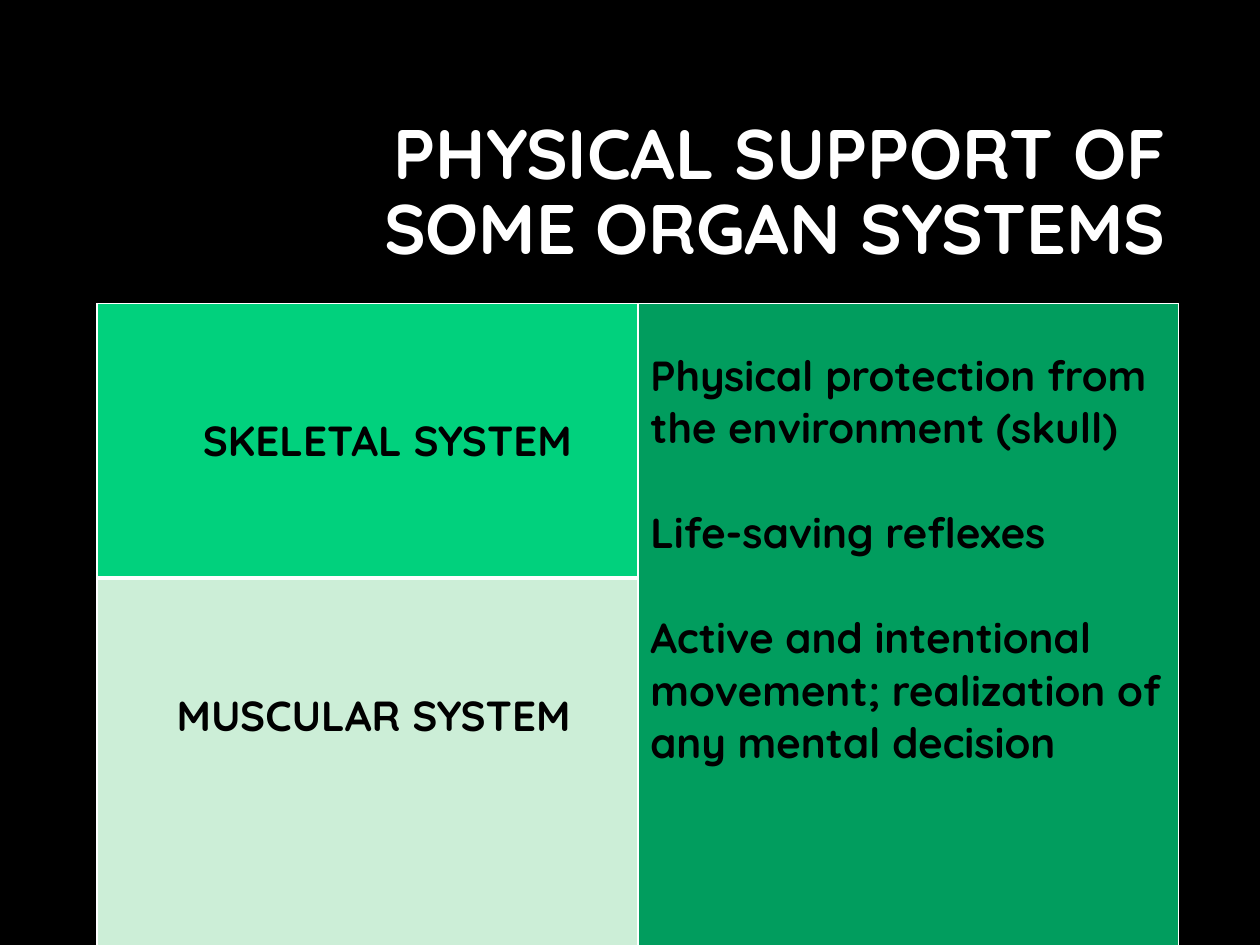
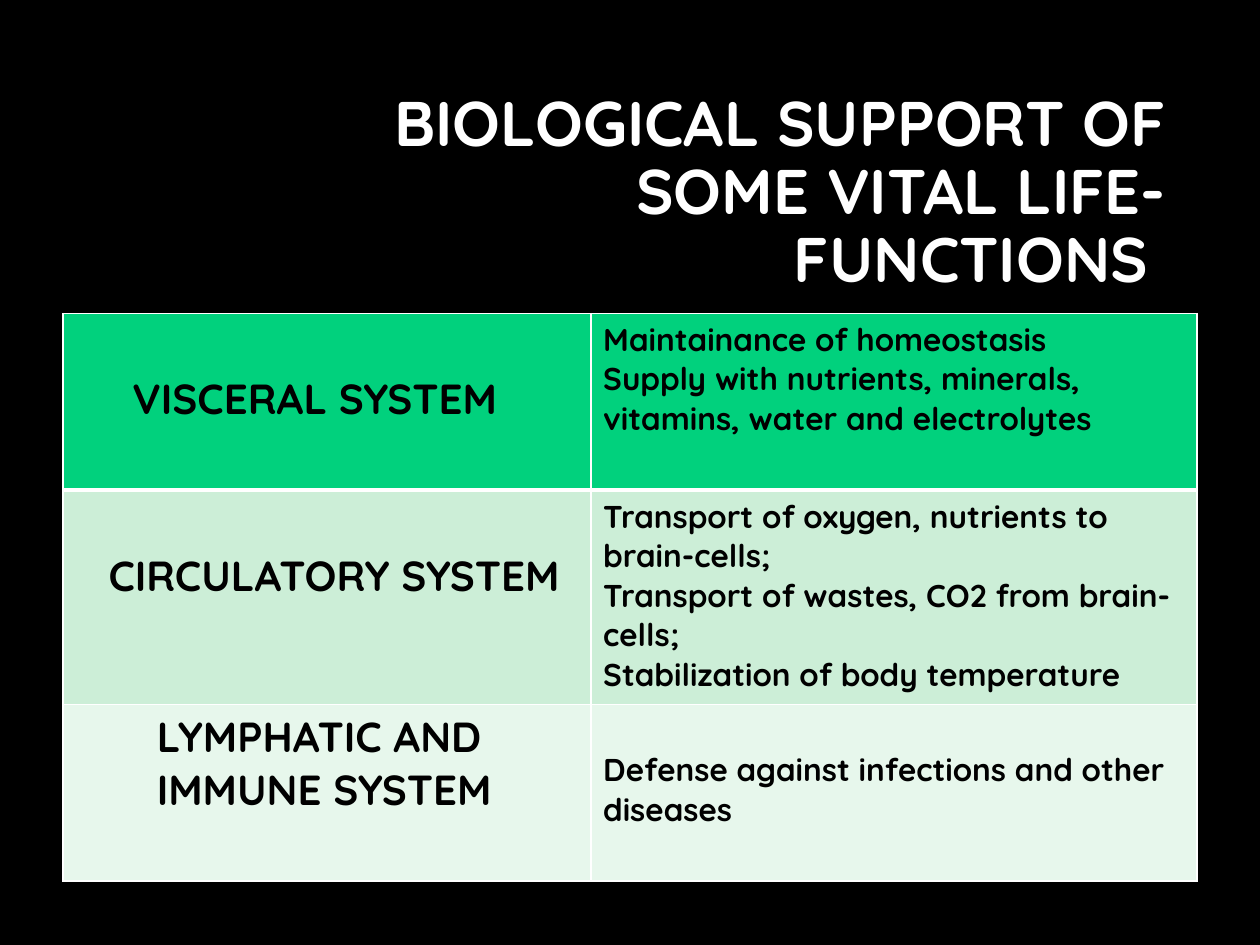
from lxml import etree
from pptx import Presentation
from pptx import util as u
from pptx.dml import color
from pptx.enum import text
from pptx.oxml import ns

FONT = "Quicksand"
COLORS = {
    "background": "000000",
    "title": "FFFFFF",
    "text": "000000",
    "border": "FFFFFF",
    "header": "01D17D",
    "support": "019D5E",
    "band": "CCEED7",
    "pale": "E7F7EC",
}


def rgb(name):
    return color.RGBColor.from_string(COLORS[name])


def add_run(p, wording, size, color_name):
    r = p.add_run()
    r.text = wording
    r.font.name = FONT
    r.font.size = u.Pt(size)
    r.font.bold = True
    r.font.color.rgb = rgb(color_name)


def add_slide(prs, title, size):
    s = prs.slides.add_slide(prs.slide_layouts[6])
    s.background.fill.solid()
    s.background.fill.fore_color.rgb = rgb("background")
    sp = s.shapes.add_textbox(u.Cm(6.05), u.Cm(2.13), u.Cm(17.7), u.Cm(3.58))
    tf = sp.text_frame
    tf.word_wrap = True
    tf.vertical_anchor = text.MSO_ANCHOR.MIDDLE
    p = tf.paragraphs[0]
    p.alignment = text.PP_ALIGN.RIGHT
    p.line_spacing = 0.9
    add_run(p, title, size, "title")
    return s


def add_table(s, left, top, widths, heights):
    frame = s.shapes.add_table(len(heights), len(widths), u.Cm(left), u.Cm(top),
                               u.Cm(sum(widths)), u.Cm(sum(heights)))
    table = frame.table
    table.first_row = False
    table.horz_banding = False
    for column, width in zip(table.columns, widths):
        column.width = u.Cm(width)
    for row, height in zip(table.rows, heights):
        row.height = u.Cm(height)
    for i, row in enumerate(table.rows):
        for cell in row.cells:
            add_borders(cell, top=3 if i == 1 else 1, bottom=3 if i == 0 else 1)
    return table


def add_borders(cell, top, bottom):
    tc_pr = cell._tc.get_or_add_tcPr()
    for side, width in zip("LRTB", (1, 1, top, bottom)):
        ln = etree.SubElement(tc_pr, ns.qn(f"a:ln{side}"), w=str(u.Pt(width)))
        fill = etree.SubElement(ln, ns.qn("a:solidFill"))
        etree.SubElement(fill, ns.qn("a:srgbClr"), val=COLORS["border"])


def fill_cell(cell, fill, lines, size, left=0.25, top=0.13, gap=0):
    cell.fill.solid()
    cell.fill.fore_color.rgb = rgb(fill)
    cell.margin_left = u.Cm(left)
    cell.margin_top = u.Cm(top)
    tf = cell.text_frame
    for i, line in enumerate(lines):
        p = tf.add_paragraph() if i else tf.paragraphs[0]
        if i and gap:
            p.space_before = u.Pt(gap)
        add_run(p, line, size, "text")


def add_physical_support(prs):
    s = add_slide(prs, "PHYSICAL SUPPORT OF SOME ORGAN SYSTEMS", 40)
    table = add_table(s, 1.96, 6.12, [10.9, 10.9], [5.53, 7.5])
    table.cell(0, 1).merge(table.cell(1, 1))
    fill_cell(table.cell(0, 0), "header", ["SKELETAL SYSTEM"], 24, 2.13, 2.24)
    fill_cell(table.cell(1, 0), "band", ["MUSCULAR SYSTEM"], 24, 1.6, 2.24)
    fill_cell(table.cell(0, 1), "support", [
        "Physical protection from the environment (skull)",
        "Life-saving reflexes",
        "Active and intentional movement; realization of any mental decision",
    ], 24, top=0.92, gap=30)


def add_biological_support(prs):
    s = add_slide(prs, "BIOLOGICAL SUPPORT OF SOME VITAL LIFE-FUNCTIONS ", 36)
    table = add_table(s, 1.27, 6.32, [10.64, 12.22], [3.56, 4.32, 3.56])
    systems = [
        ("header", ["VISCERAL SYSTEM"], 1.4, 1.19,
         ["Maintainance of homeostasis",
          "Supply with nutrients, minerals, vitamins, water and electrolytes"], 0.13),
        ("band", ["CIRCULATORY SYSTEM"], 0.92, 1.19,
         ["Transport of oxygen, nutrients to brain-cells;",
          "Transport of wastes, CO2 from brain-cells;",
          "Stabilization of body temperature"], 0.13),
        ("pale", ["LYMPHATIC AND", "IMMUNE SYSTEM"], 1.89, 0.13,
         ["Defense against infections and other diseases"], 0.92),
    ]
    for i, (fill, name, left, name_top, functions, functions_top) in enumerate(systems):
        fill_cell(table.cell(i, 0), fill, name, 24, left, name_top)
        fill_cell(table.cell(i, 1), fill, functions, 18, top=functions_top)


def main():
    prs = Presentation()
    prs.slide_width = u.Cm(25.4)
    prs.slide_height = u.Cm(19.05)
    add_physical_support(prs)
    add_biological_support(prs)
    prs.save("out.pptx")


if __name__ == "__main__":
    main()
